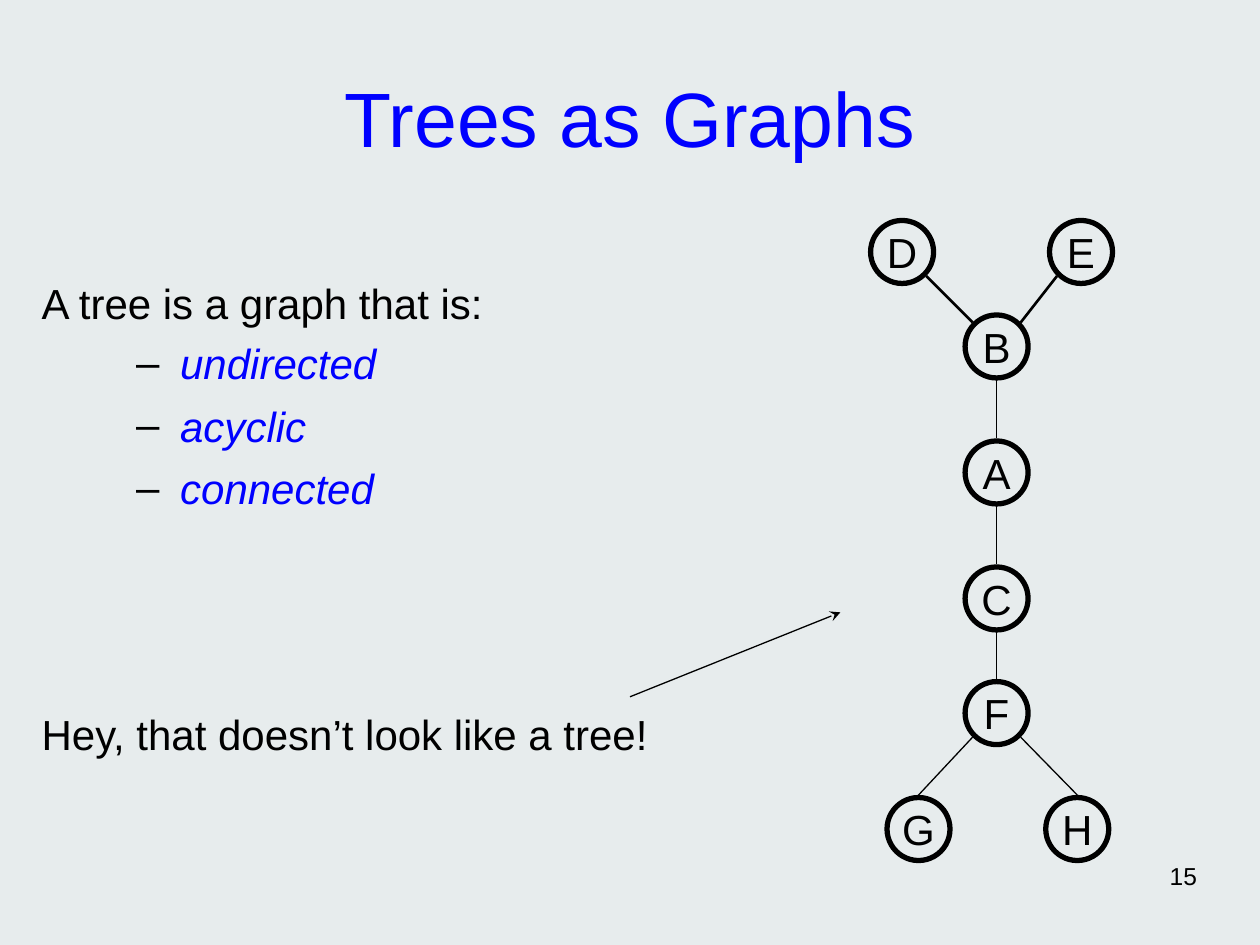
from dataclasses import dataclass
from math import hypot

from lxml import etree
from pptx import Presentation
from pptx.dml.color import RGBColor
from pptx.enum.shapes import MSO_CONNECTOR, MSO_SHAPE
from pptx.enum.text import MSO_ANCHOR, PP_ALIGN
from pptx.oxml.ns import qn
from pptx.util import Inches, Pt

LEFT, CENTER, RIGHT = PP_ALIGN.LEFT, PP_ALIGN.CENTER, PP_ALIGN.RIGHT
TOP, MIDDLE = MSO_ANCHOR.TOP, MSO_ANCHOR.MIDDLE
STRAIGHT, OVAL = MSO_CONNECTOR.STRAIGHT, MSO_SHAPE.OVAL

# The slide is a grid of one-inch cells.
COLUMNS, ROWS = 10, 7.5
CELL = Inches(1)
NODE_SIZE = 0.5
EDGE_REACH = 0.27  # from a node's centre to just outside its outline


@dataclass(frozen=True)
class Theme:
    font: str = "Arial"
    background: RGBColor = RGBColor(0xE7, 0xEC, 0xED)
    ink: RGBColor = RGBColor(0, 0, 0)
    accent: RGBColor = RGBColor(0, 0, 0xFF)
    title: int = 44
    body: int = 24
    number: int = 14
    node_line: float = 3
    thick_edge: float = 1.5
    thin_edge: float = 0.75


THEME = Theme()

# Node centres as (column, row)
NODES = {
    "A": (7.91, 3.75),
    "B": (7.91, 2.75),
    "C": (7.91, 4.75),
    "D": (7.16, 2),
    "E": (8.58, 2),
    "F": (7.91, 5.66),
    "G": (7.29, 6.58),
    "H": (8.55, 6.58),
}

UP, DOWN = (0, -1), (0, 1)
UP_LEFT, UP_RIGHT = (-1, -1), (1, -1)
DOWN_LEFT, DOWN_RIGHT = (-1, 1), (1, 1)

# Start node, side it leaves from, end node, side it arrives at, line width
EDGES = [
    ("B", UP_LEFT, "D", DOWN_RIGHT, THEME.thick_edge),
    ("B", UP_RIGHT, "E", DOWN_LEFT, THEME.thick_edge),
    ("A", UP, "B", DOWN, THEME.thin_edge),
    ("A", DOWN, "C", UP, THEME.thin_edge),
    ("C", DOWN, "F", UP, THEME.thin_edge),
    ("F", DOWN_LEFT, "G", UP, THEME.thin_edge),
    ("F", DOWN_RIGHT, "H", UP, THEME.thin_edge),
]


def cells(*lengths):
    """Turn grid lengths into slide units."""
    return [int(length * CELL) for length in lengths]


def write_text(frame, lines, size=THEME.body, color=THEME.ink, italic=False,
               align=LEFT, anchor=TOP, wrap=True, bullet=None, space_before=0):
    frame.word_wrap = wrap
    frame.vertical_anchor = anchor
    frame.margin_left = frame.margin_right = 0
    frame.margin_top = frame.margin_bottom = 0
    for index, line in enumerate(lines):
        paragraph = frame.paragraphs[0] if index == 0 else frame.add_paragraph()
        add_line(paragraph, line, size, color, italic, align, bullet, space_before)


def add_line(paragraph, line, size, color, italic, align, bullet, space_before):
    paragraph.alignment = align
    paragraph.space_before = Pt(space_before)
    run = paragraph.add_run()
    run.text = line
    run.font.name = THEME.font
    run.font.size = Pt(size)
    run.font.italic = italic
    run.font.color.rgb = color
    if bullet:
        add_bullet(paragraph, bullet)


def add_bullet(paragraph, character, text_at=1.1, hang=0.35):
    properties = paragraph._p.get_or_add_pPr()
    properties.set("marL", str(Inches(text_at)))
    properties.set("indent", str(-Inches(hang)))
    bullet_color = etree.SubElement(properties, qn("a:buClr"))
    etree.SubElement(bullet_color, qn("a:srgbClr")).set("val", str(THEME.ink))
    etree.SubElement(properties, qn("a:buFont")).set("typeface", THEME.font)
    etree.SubElement(properties, qn("a:buChar")).set("char", character)


def add_text(slide, box, lines, **text_format):
    shape = slide.shapes.add_textbox(*cells(*box))
    write_text(shape.text_frame, lines, **text_format)


def add_node(slide, label, centre):
    left, top = (position - NODE_SIZE / 2 for position in centre)
    node = slide.shapes.add_shape(OVAL, *cells(left, top, NODE_SIZE, NODE_SIZE))
    node.shadow.inherit = False
    node.fill.background()
    node.line.color.rgb = THEME.ink
    node.line.width = Pt(THEME.node_line)
    write_text(node.text_frame, [label], align=CENTER, anchor=MIDDLE, wrap=False)


def add_line_between(slide, start, end, width, arrowhead=None):
    connector = slide.shapes.add_connector(STRAIGHT, *cells(*start, *end))
    connector.line.color.rgb = THEME.ink
    connector.line.width = Pt(width)
    if arrowhead:
        outline = connector.line._get_or_add_ln()
        etree.SubElement(outline, qn("a:tailEnd")).set("type", arrowhead)
    etree.SubElement(connector._element.spPr, qn("a:effectLst"))


def node_side(label, direction):
    """Point just outside a node in the given direction."""
    scale = EDGE_REACH / hypot(*direction)
    return [centre + scale * step for centre, step in zip(NODES[label], direction)]


def add_tree(slide):
    for label, centre in NODES.items():
        add_node(slide, label, centre)
    for start, leaving, end, arriving, width in EDGES:
        add_line_between(slide, node_side(start, leaving),
                         node_side(end, arriving), width)


def main():
    presentation = Presentation()
    presentation.slide_width, presentation.slide_height = cells(COLUMNS, ROWS)
    slide = presentation.slides.add_slide(presentation.slide_layouts[6])
    slide.background.fill.solid()
    slide.background.fill.fore_color.rgb = THEME.background

    add_text(slide, (0.5, 0.3, COLUMNS - 1, 1.25), ["Trees as Graphs"],
             size=THEME.title, color=THEME.accent, align=CENTER, anchor=MIDDLE)
    add_text(slide, (0.33, 2.2, 5.08, 0.4), ["A tree is a graph that is:"])
    add_text(slide, (0.33, 2.68, 5.08, 1.4), ["undirected", "acyclic", "connected"],
             color=THEME.accent, italic=True, bullet="–", space_before=7)
    add_text(slide, (0.33, 5.62, 5.08, 0.4), ["Hey, that doesn’t look like a tree!"])
    add_tree(slide)
    add_line_between(slide, (5, 5.53), (6.67, 4.86), THEME.thin_edge,
                     arrowhead="stealth")
    add_text(slide, (7.17, 6.83, 2.33, 0.31), ["15"],
             size=THEME.number, align=RIGHT)
    presentation.save("out.pptx")


if __name__ == "__main__":
    main()
